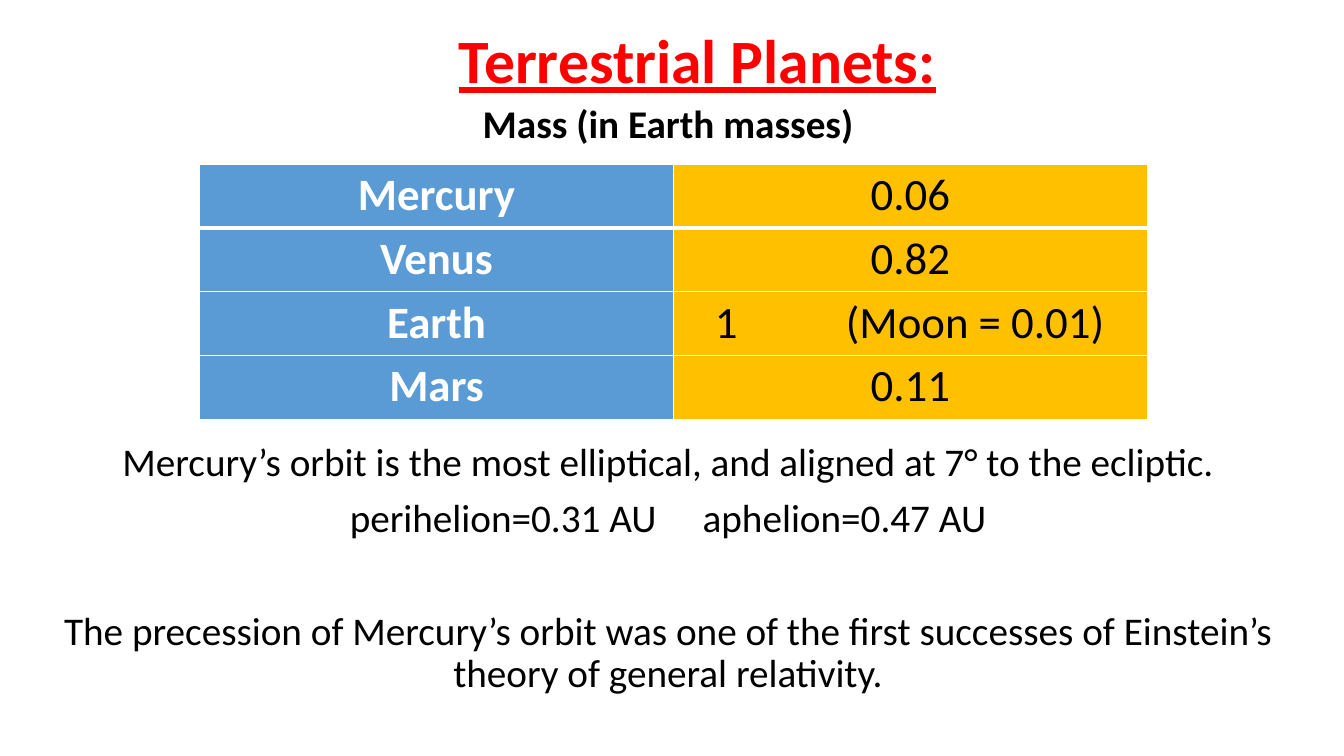
from dataclasses import dataclass

from lxml import etree
from pptx import Presentation
from pptx.dml.color import RGBColor
from pptx.enum.text import MSO_ANCHOR as Anchor, PP_ALIGN as Align
from pptx.oxml.ns import qn
from pptx.util import Inches, Pt


@dataclass(frozen=True)
class Theme:
    font: str = "Calibri"
    title_size: int = 44
    table_size: int = 32
    body_size: int = 28
    red: str = "FF0000"
    black: str = "000000"
    white: str = "FFFFFF"
    blue: str = "5B9BD5"
    gold: str = "FFC000"


class SlideBuilder:
    def __init__(self, slide, theme):
        self.slide = slide
        self.theme = theme

    def style(self, para, size, color, bold=False, spacing=0.9):
        para.alignment = Align.CENTER
        para.line_spacing = spacing
        para.font.name = self.theme.font
        para.font.size = Pt(size)
        para.font.bold = bold
        para.font.color.rgb = RGBColor.from_string(color)

    def text(self, bounds, lines, size, color, bold=False, anchor=Anchor.TOP):
        """Add centred paragraphs from (text, points before) pairs."""
        box = self.slide.shapes.add_textbox(*map(Inches, bounds))
        frame = box.text_frame
        frame.word_wrap = True
        frame.vertical_anchor = anchor
        for index, (words, before) in enumerate(lines):
            para = frame.add_paragraph() if index else frame.paragraphs[0]
            para.text = words
            para.space_before = Pt(before)
            self.style(para, size, color, bold)
        return frame

    def border(self, cell, side, width):
        properties = cell._tc.get_or_add_tcPr()
        line = etree.Element(qn(f"a:ln{side}"), w=str(Pt(width)))
        fill = etree.SubElement(line, qn("a:solidFill"))
        etree.SubElement(fill, qn("a:srgbClr"), val=self.theme.white)
        properties.insert("LRTB".index(side), line)

    def table(self, bounds, rows):
        theme = self.theme
        looks = ((theme.blue, theme.white, True), (theme.gold, theme.black, False))
        table = self.slide.shapes.add_table(
            len(rows), len(looks), *map(Inches, bounds)).table
        for row_index, row in enumerate(rows):
            for column, (words, look) in enumerate(zip(row, looks)):
                fill, color, bold = look
                cell = table.cell(row_index, column)
                cell.text = words
                cell.margin_left = cell.margin_right = Inches(0.07)
                cell.margin_top = cell.margin_bottom = 0
                cell.fill.solid()
                cell.fill.fore_color.rgb = RGBColor.from_string(fill)
                para = cell.text_frame.paragraphs[0]
                self.style(para, theme.table_size, color, bold, 1.07)
                for side in "LRTB":
                    header_edge = (row_index, side) in ((0, "B"), (1, "T"))
                    self.border(cell, side, 3 if header_edge else 1)
        return table

    def tabbed_cell(self, cell, indent, stop):
        """Left-align a cell and set one tab stop, measured from its indent."""
        cell.margin_left = Inches(indent)
        para = cell.text_frame.paragraphs[0]
        para.alignment = Align.LEFT
        properties = para._p.get_or_add_pPr()
        tabs = etree.Element(qn("a:tabLst"))
        etree.SubElement(tabs, qn("a:tab"), pos=str(Inches(stop)), algn="l")
        defaults = properties.find(qn("a:defRPr"))
        defaults.addprevious(tabs)


def main():
    deck = Presentation()
    deck.slide_width, deck.slide_height = Inches(13.33), Inches(7.5)
    theme = Theme()
    page = SlideBuilder(deck.slides.add_slide(deck.slide_layouts[6]), theme)

    title = page.text((2.17, 0.1, 9.5, 1.06), [("Terrestrial Planets:", 0)],
                      theme.title_size, theme.red, True, Anchor.MIDDLE)
    title.paragraphs[0].font.underline = True
    page.text((0.47, 0.99, 12.31, 0.55), [("Mass (in Earth masses)", 0)],
              theme.body_size, theme.black, True)

    masses = page.table((1.98, 1.63, 9.4, 2.53), [
        ("Mercury", "0.06"),
        ("Venus", "0.82"),
        ("Earth", "1\t(Moon = 0.01)"),
        ("Mars", "0.11"),
    ])
    page.tabbed_cell(masses.cell(2, 1), 0.41, 1.3)

    page.text((0.47, 4.34, 12.31, 2.92), [
        ("Mercury’s orbit is the most elliptical, and aligned at 7° to the ecliptic.", 0),
        ("perihelion=0.31 AU\taphelion=0.47 AU", 10),
        ("The precession of Mercury’s orbit was one of the first successes of "
         "Einstein’s theory of general relativity.", 50),
    ], theme.body_size, theme.black)

    deck.save("out.pptx")


if __name__ == "__main__":
    main()
